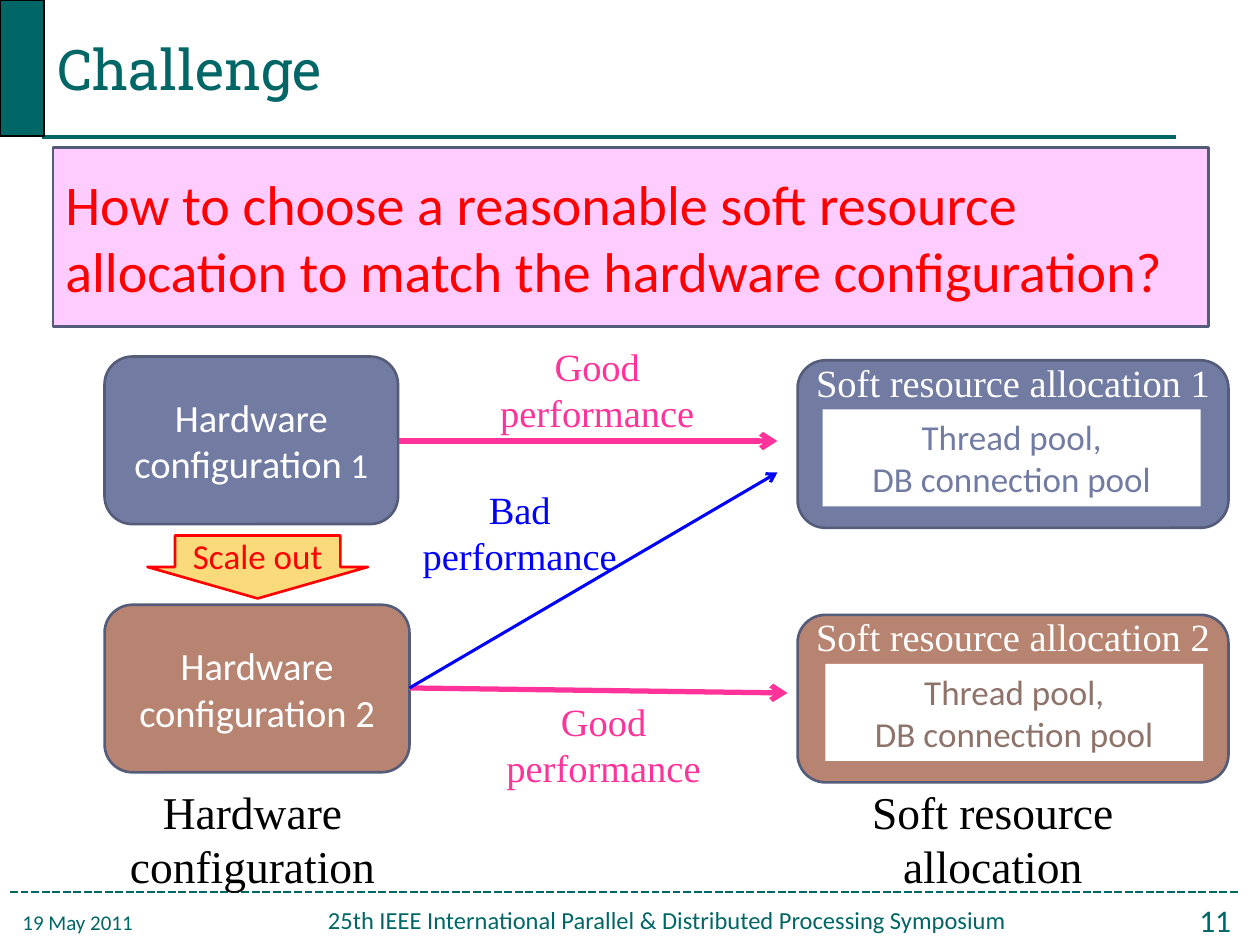
from lxml import etree
from pptx import Presentation
from pptx.dml.color import RGBColor
from pptx.enum.dml import MSO_LINE
from pptx.enum.shapes import MSO_CONNECTOR, MSO_SHAPE
from pptx.enum.text import MSO_ANCHOR, PP_ALIGN
from pptx.oxml.ns import qn
from pptx.util import Inches, Pt

RECT, ROUND, DOWN = MSO_SHAPE.RECTANGLE, MSO_SHAPE.ROUNDED_RECTANGLE, MSO_SHAPE.DOWN_ARROW
STRAIGHT, DASH = MSO_CONNECTOR.STRAIGHT, MSO_LINE.SQUARE_DOT
LEFT, CENTER = PP_ALIGN.LEFT, PP_ALIGN.CENTER
TOP, MIDDLE = MSO_ANCHOR.TOP, MSO_ANCHOR.MIDDLE
SANS, SLAB, SERIF = "Calibri", "Roboto Slab", "Times New Roman"

TEAL = RGBColor(0x00, 0x66, 0x66)
BLACK = RGBColor(0x00, 0x00, 0x00)
WHITE = RGBColor(0xFF, 0xFF, 0xFF)
SLATE = RGBColor(0x72, 0x7C, 0xA3)
CLAY = RGBColor(0xB8, 0x84, 0x72)
BROWN = RGBColor(0x8E, 0x73, 0x6A)
EDGE = RGBColor(0x54, 0x5C, 0x79)
PINK = RGBColor(0xFF, 0x33, 0x99)
BLUE = RGBColor(0x00, 0x00, 0xFF)
RED = RGBColor(0xFF, 0x00, 0x00)
YELLOW = RGBColor(0xFA, 0xDA, 0x7A)
ROSE = RGBColor(0xFF, 0xCC, 0xFF)

BOX_H = 1.33
SOFT_X, SOFT_W = 6.33, 3.42
POOL = ["Thread pool,", "DB connection pool"]
QUESTION = "How to choose a reasonable soft resource allocation to match the hardware configuration?"
SYMPOSIUM = "25th IEEE International Parallel & Distributed Processing Symposium"

FRAME_LINES = [
    ((0.33, 1.09), (9.33, 1.09), 2.25, None),
    ((0.08, 7.08), (9.83, 7.08), 1.5, DASH),
]
FRAME_TEXTS = [
    ("Challenge", (0.36, 0, 8.39, 1.08), SLAB, 32, LEFT, MIDDLE),
    ("19 May 2011", (0.08, 7.13, 1.33, 0.37), SANS, 12, LEFT, MIDDLE),
    (SYMPOSIUM, (1.92, 7.13, 6.75, 0.37), SANS, 14, CENTER, TOP),
    ("11", (9.42, 7.1, 0.57, 0.4), SANS, 18, LEFT, TOP),
]
HARDWARE = [
    ([("Hardware configuration ", 22), ("1", 20)], 2.83, 2.33, SLATE),
    ([("Hardware configuration 2", 22)], 4.8, 2.42, CLAY),
]
SOFT = [
    ("Soft resource allocation 1", 2.86, 6.53, SLATE, SLATE),
    ("Soft resource allocation 2", 4.88, 6.55, CLAY, BROWN),
]
ARROWS = [
    ((3.17, 3.5), (6.17, 3.5), PINK, 3),
    ((3.25, 5.46), (6.25, 5.5), PINK, 3),
    ((3.25, 5.46), (6.17, 3.75), BLUE, 1.75),
]
LABELS = [
    ("Good performance", (3.83, 2.67, 1.82, 0.84), 22, PINK),
    ("Bad performance", (3.25, 3.81, 1.75, 0.84), 22, BLUE),
    ("Good performance", (3.83, 5.49, 1.92, 0.84), 22, PINK),
    ("Hardware configuration", (0.92, 6.17, 2.17, 0.98), 26, BLACK),
    ("Soft resource allocation", (6.67, 6.17, 2.42, 0.98), 26, BLACK),
]

prs = Presentation()
prs.slide_width, prs.slide_height = Inches(10), Inches(7.5)
s = prs.slides.add_slide(prs.slide_layouts[6])


def write(sp, paragraphs, font, color, align=CENTER, anchor=MIDDLE):
    tf = sp.text_frame
    tf.word_wrap = True
    tf.vertical_anchor = anchor
    for i, runs in enumerate(paragraphs):
        p = tf.add_paragraph() if i else tf.paragraphs[0]
        p.alignment = align
        for text, size in runs:
            r = p.add_run()
            r.text = text
            r.font.name, r.font.size = font, Pt(size)
            r.font.color.rgb = color


def add_box(kind, place, fill, line=None, width=1.5):
    sp = s.shapes.add_shape(kind, *map(Inches, place))
    sp.shadow.inherit = False
    sp.fill.solid()
    sp.fill.fore_color.rgb = fill
    if line is None:
        sp.line.fill.background()
    else:
        sp.line.color.rgb, sp.line.width = line, Pt(width)
    return sp


def add_text(text, place, font, size, color, align=CENTER, anchor=TOP):
    sp = s.shapes.add_textbox(*map(Inches, place))
    write(sp, [[(text, size)]], font, color, align, anchor)


def add_line(start, end, color, width, dash=None, arrow=False):
    c = s.shapes.add_connector(STRAIGHT, *map(Inches, start + end))
    c.line.color.rgb, c.line.width = color, Pt(width)
    if dash:
        c.line.dash_style = dash
    if arrow:
        etree.SubElement(c.line._get_or_add_ln(), qn("a:tailEnd"), type="arrow")
    etree.SubElement(c._element.spPr, qn("a:effectLst"))


for start, end, width, dash in FRAME_LINES:
    add_line(start, end, TEAL, width, dash)
add_box(RECT, (0, 0, 0.35, 1.08), TEAL, BLACK, 1)
for text, place, font, size, align, anchor in FRAME_TEXTS:
    add_text(text, place, font, size, TEAL, align, anchor)

for runs, top, width, fill in HARDWARE:
    write(add_box(ROUND, (0.83, top, width, BOX_H), fill, EDGE), [runs], SANS, WHITE)

for title, top, pool_x, fill, ink in SOFT:
    add_box(ROUND, (SOFT_X, top, SOFT_W, BOX_H), fill, EDGE)
    pool = add_box(RECT, (pool_x, top + 0.39, 3, 0.77), WHITE)
    write(pool, [[(text, 20)] for text in POOL], SANS, ink, anchor=TOP)
    add_text(title, (SOFT_X, top - 0.06, SOFT_W, 0.47), SERIF, 22, WHITE)

for start, end, color, width in ARROWS:
    add_line(start, end, color, width, arrow=True)
for text, place, size, color in LABELS:
    add_text(text, place, SERIF, size, color)

scale = add_box(DOWN, (1.17, 4.25, 1.75, 0.5), YELLOW, RED)
scale.adjustments[0], scale.adjustments[1] = 0.75, 0.5
write(scale, [[("Scale out", 20)]], SANS, RED)

banner = add_box(RECT, (0.42, 1.17, 9.17, 1.42), ROSE, EDGE)
write(banner, [[(QUESTION, 32)]], SANS, RED, LEFT)

prs.save("out.pptx")
